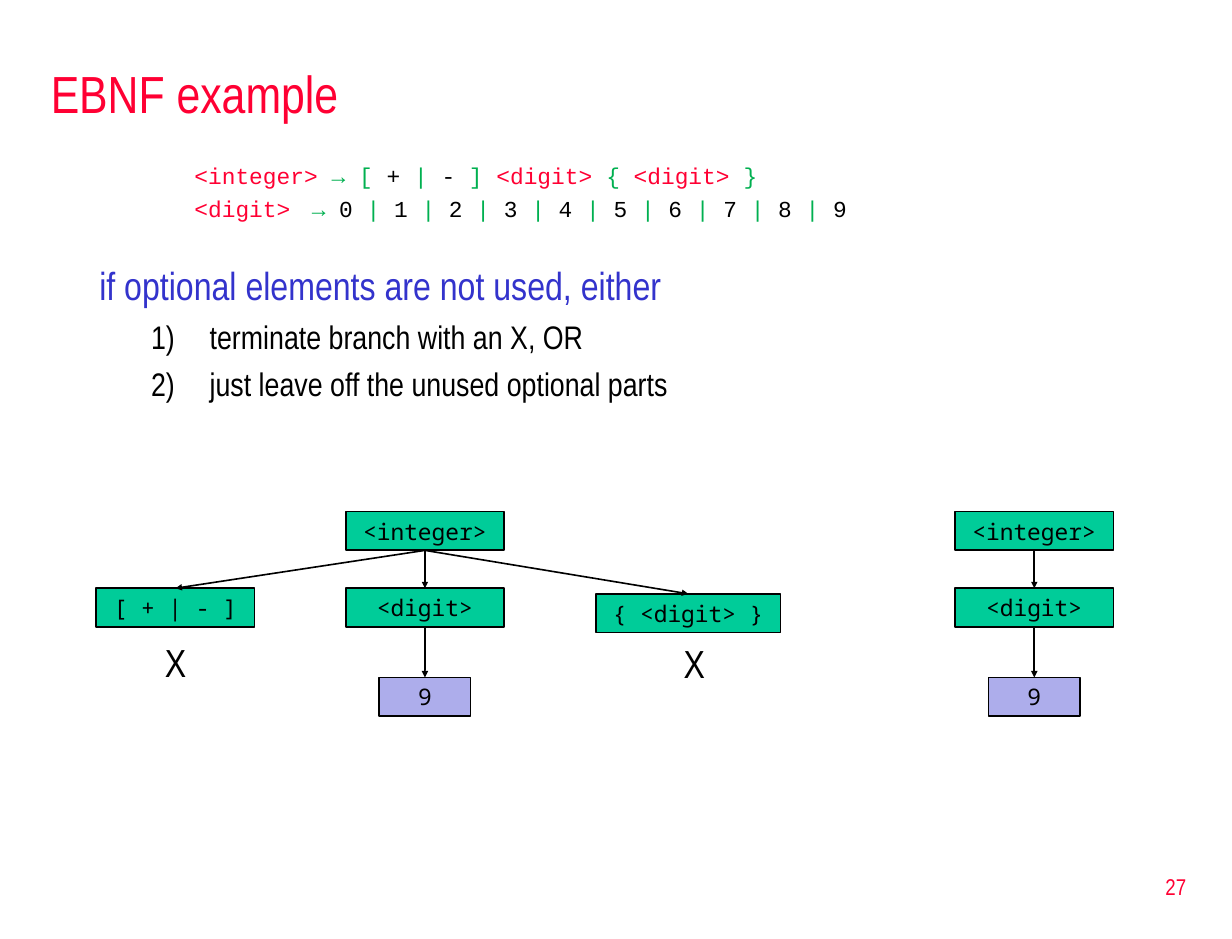
from lxml.etree import SubElement
from pptx import Presentation
from pptx.dml.color import RGBColor
from pptx.enum.shapes import MSO_CONNECTOR, MSO_SHAPE
from pptx.enum.text import MSO_ANCHOR, PP_ALIGN
from pptx.oxml.ns import qn
from pptx.util import Cm, Pt

RED, GREEN, BLUE, BLACK = "FF0033", "00B050", "3333CC", "000000"
NODE_FILL, LEAF_FILL = "00CC99", "ADADEB"


def color(hex_code):
    return RGBColor.from_string(hex_code)


def write(text, shape=None, box=None, font="Arial Narrow", size=14, ink=BLACK,
          align=PP_ALIGN.LEFT, anchor=MSO_ANCHOR.TOP, before=0):
    """Add a paragraph to a shape, or to a new text box; text may be (text, ink) pairs."""
    if shape is None:
        shape = slide.shapes.add_textbox(*[Cm(length) for length in box])
    frame = shape.text_frame
    frame.word_wrap = True
    frame.vertical_anchor = anchor
    paragraph = frame.paragraphs[-1]
    if paragraph.runs:
        paragraph = frame.add_paragraph()
    paragraph.alignment = align
    paragraph.space_before = Pt(before)
    for part, part_ink in [(text, ink)] if isinstance(text, str) else text:
        run = paragraph.add_run()
        run.text = part
        run.font.name = font
        run.font.size = Pt(size)
        run.font.color.rgb = color(part_ink)
    return shape


presentation = Presentation()
presentation.slide_width, presentation.slide_height = Cm(26.67), Cm(20.32)
slide = presentation.slides.add_slide(presentation.slide_layouts[6])

# Title and slide number
write("EBNF example", box=(0.85, 1.06, 25.2, 1.9), size=32, ink=RED,
      anchor=MSO_ANCHOR.MIDDLE)
write("27", box=(20.37, 18.52, 5.56, 1.34), ink=RED, align=PP_ALIGN.RIGHT,
      anchor=MSO_ANCHOR.MIDDLE)

# Grammar: nonterminals red, EBNF symbols green, terminals black
grammar = None
for rule in ("<integer> → [ + | - ] <digit> { <digit> }",
             "<digit> \t→ 0 | 1 | 2 | 3 | 4 | 5 | 6 | 7 | 8 | 9"):
    tokens = []
    for token in rule.split(" "):
        if token.startswith("<"):
            ink = RED
        else:
            ink = GREEN if token.strip() in "→[]{}|" else BLACK
        tokens.append((token + " ", ink))
    grammar = write(tokens, shape=grammar, box=(3.96, 3.38, 22.1, 1.7),
                    font="Courier New", before=3.2)

# Explanation with numbered choices
explanation = write("if optional elements are not used, either",
                    box=(1.9, 5.54, 24.18, 3.2), size=24, ink=BLUE)
for choice in ("terminate branch with an X, OR",
               "just leave off the unused optional parts"):
    write(choice, shape=explanation, size=20, before=4.8)
    properties = explanation.text_frame.paragraphs[-1]._p.get_or_add_pPr()
    properties.set("marL", str(Cm(2.39)))
    properties.set("indent", str(Cm(-1.27)))
    SubElement(properties, qn("a:buFont"), typeface="Arial Narrow")
    SubElement(properties, qn("a:buAutoNum"), type="arabicParenR")

# Parse tree nodes: key, text, centre x, top, width, fill
LEFT_TREE, RIGHT_TREE = 9.2, 22.39
node_height = 0.84
nodes = [("sign", "[ + | - ]", 3.8, 12.73, 3.43, NODE_FILL),
         ("repeat", "{ <digit> }", 14.9, 12.85, 3.99, NODE_FILL)]
for tree, center in (("left", LEFT_TREE), ("right", RIGHT_TREE)):
    nodes += [(tree + " integer", "<integer>", center, 11.07, 3.43, NODE_FILL),
              (tree + " digit", "<digit>", center, 12.73, 3.43, NODE_FILL),
              (tree + " leaf", "9", center, 14.66, 1.98, LEAF_FILL)]

tree_nodes = {}
for key, label, center, top, width, fill in nodes:
    node = slide.shapes.add_shape(MSO_SHAPE.RECTANGLE, Cm(center - width / 2), Cm(top),
                                  Cm(width), Cm(node_height))
    node.shadow.inherit = False
    node.fill.solid()
    node.fill.fore_color.rgb = color(fill)
    node.line.color.rgb = color(BLACK)
    node.line.width = Pt(1)
    write(label, shape=node, font="Noto Sans Mono", align=PP_ALIGN.CENTER,
          anchor=MSO_ANCHOR.MIDDLE)
    tree_nodes[key] = node

# Branches from parent to child
for parent, child in (("left integer", "sign"), ("left integer", "left digit"),
                      ("left integer", "repeat"), ("left digit", "left leaf"),
                      ("right integer", "right digit"), ("right digit", "right leaf")):
    branch = slide.shapes.add_connector(MSO_CONNECTOR.STRAIGHT, 0, 0, 0, 0)
    branch.begin_connect(tree_nodes[parent], 2)
    branch.end_connect(tree_nodes[child], 0)
    branch.line.color.rgb = color(BLACK)
    branch.line.width = Pt(1)
    SubElement(branch.line._get_or_add_ln(), qn("a:tailEnd"), type="triangle",
               w="sm", len="sm")
    SubElement(branch._element.spPr, qn("a:effectLst"))

# X marks under the unused optional parts
for center, top in ((3.8, 13.69), (15.03, 13.72)):
    write("X", box=(center - 1.07, top, 2.14, 1.27), size=24, align=PP_ALIGN.CENTER)

presentation.save("out.pptx")
